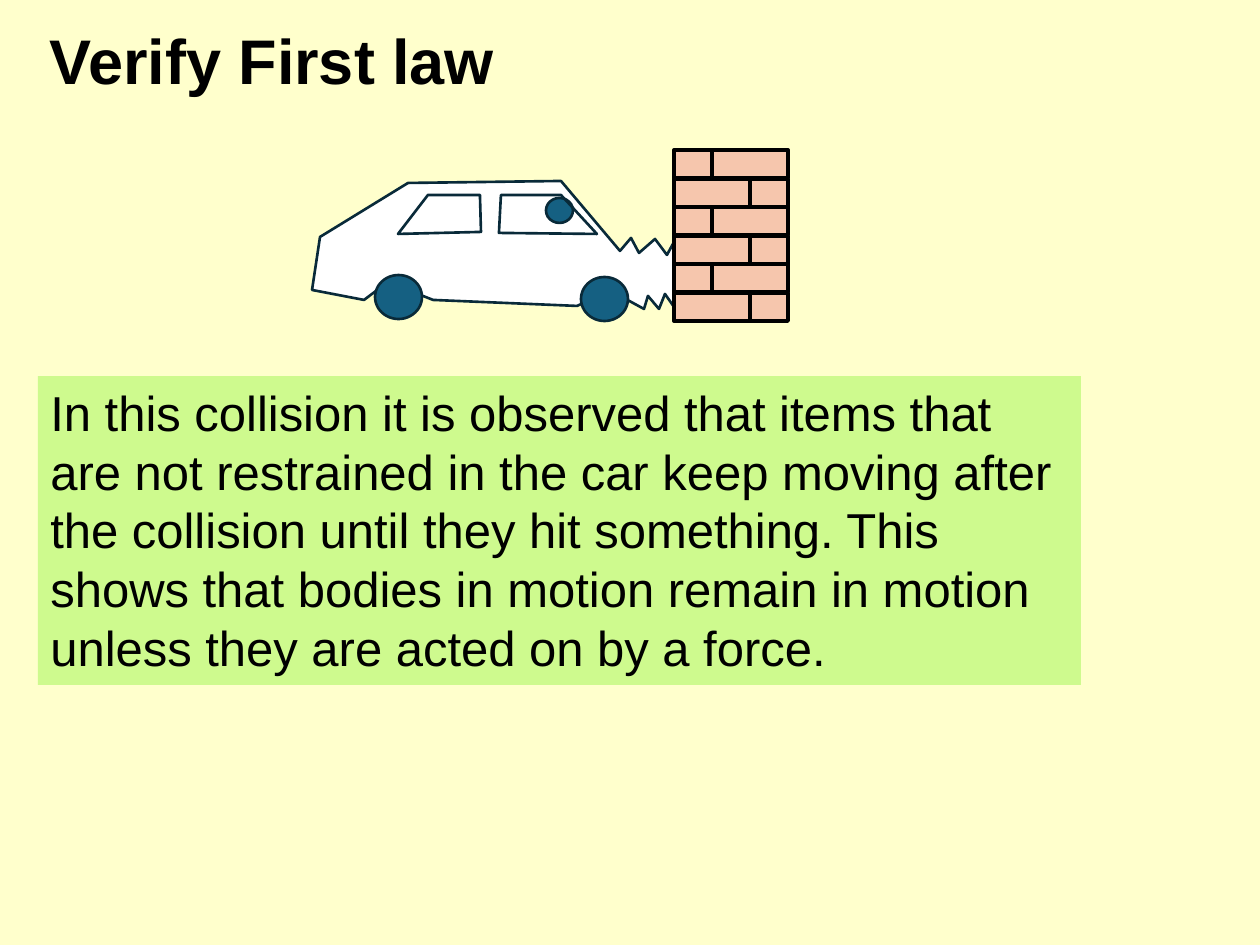
from pptx import Presentation
from pptx.dml.color import RGBColor
from pptx.enum.shapes import MSO_SHAPE as Shape
from pptx.enum.text import MSO_ANCHOR as Anchor, MSO_AUTO_SIZE as Fit, PP_ALIGN as Align
from pptx.util import Emu, Pt

SCALE = 914400 / 126  # EMU per px
INK, EDGE, BLUE = "000000", "092A39", "156082"
BRICK, WHITE, CREAM, LIME = "F6C6AD", "FFFFFF", "FFFFCC", "CEFA8E"

BODY = [(312, 290), (320, 237), (408, 183), (561, 181), (620, 251),
        (631, 238), (639, 253), (655, 239), (667, 255), (674, 242),
        (674, 307), (665, 294), (659, 309), (648, 296), (644, 309),
        (611, 291), (577, 306), (433, 300), (388, 282), (364, 300)]
FRONT = [(501, 195), (561, 195), (597, 234), (499, 233)]
REAR = [(480, 195), (428, 195), (398, 234), (481, 232)]
HEAD = (546, 198, 27, 25)
WHEELS = [(375, 275, 47, 44), (581, 277, 47, 44)]

NOTE = ("In this collision it is observed that items that are not restrained "
        "in the car keep moving after the collision until they hit something. "
        "This shows that bodies in motion remain in motion unless they are "
        "acted on by a force.")


def px(n):
    return Emu(round(n * SCALE))


def rgb(code):
    return RGBColor.from_string(code)


def assign(obj, **values):
    for name, value in values.items():
        setattr(obj, name, value)


def paint(shape, fill=None, line=None, width=1.5):
    shape.shadow.inherit = False
    if fill:
        shape.fill.solid()
        shape.fill.fore_color.rgb = rgb(fill)
    else:
        shape.fill.background()
    if line:
        shape.line.color.rgb = rgb(line)
        shape.line.width = Pt(width)
    else:
        shape.line.fill.background()


def add_block(shapes, kind, box, **look):
    shape = shapes.add_shape(kind, *map(px, box))
    paint(shape, **look)
    return shape


def add_path(shapes, points, fill=None):
    pen = shapes.build_freeform(*points[0], scale=SCALE)
    pen.add_line_segments(points[1:], close=True)
    paint(pen.convert_to_shape(), fill, EDGE)


def write(shape, text, size, bold, frame, para):
    body = shape.text_frame
    body.text = text
    assign(body, word_wrap=True, **frame)
    line = body.paragraphs[0]
    assign(line, alignment=Align.LEFT, **para)
    font = line.runs[0].font
    assign(font, name="Arial", size=Pt(size), bold=bold)
    font.color.rgb = rgb(INK)


def add_title(slide, text):
    title = slide.shapes.title
    left, top, width, height = map(px, (37, 23, 1196, 82))
    assign(title, left=left, top=top, width=width, height=height)
    write(title, text, 36, True,
          {"vertical_anchor": Anchor.MIDDLE, "auto_size": Fit.NONE},
          {"line_spacing": 0.9})


def add_car(shapes):
    add_path(shapes, BODY, WHITE)
    add_block(shapes, Shape.OVAL, HEAD, fill=BLUE, line=EDGE)
    for pane in (FRONT, REAR):
        add_path(shapes, pane)
    for wheel in WHEELS:
        add_block(shapes, Shape.OVAL, wheel, fill=BLUE, line=EDGE)


def add_wall(shapes, left=674, top=150, rows=6, pitch=28.6, short=38):
    wall = shapes.add_group_shape().shapes
    for row in range(rows):
        y = round(top + row * pitch)
        x = left
        # Short and long bricks swap sides on every row
        for width in (short, 2 * short) if row % 2 == 0 else (2 * short, short):
            add_block(wall, Shape.RECTANGLE, (x, y, width, 28),
                      fill=BRICK, line=INK, width=2.25)
            x += width


def add_note(shapes, text):
    note = add_block(shapes, Shape.RECTANGLE, (38, 376, 1043, 309), fill=LIME)
    write(note, text, 28, False,
          {"vertical_anchor": Anchor.TOP, "auto_size": Fit.SHAPE_TO_FIT_TEXT},
          {"space_after": Pt(12)})


def main():
    deck = Presentation()
    assign(deck, slide_width=px(1260), slide_height=px(945))
    slide = deck.slides.add_slide(deck.slide_layouts[5])
    back = slide.background.fill
    back.solid()
    back.fore_color.rgb = rgb(CREAM)

    # Heading, crash scene, explanation
    add_title(slide, "Verify First law")
    add_car(slide.shapes)
    add_wall(slide.shapes)
    add_note(slide.shapes, NOTE)
    deck.save("out.pptx")


if __name__ == "__main__":
    main()
